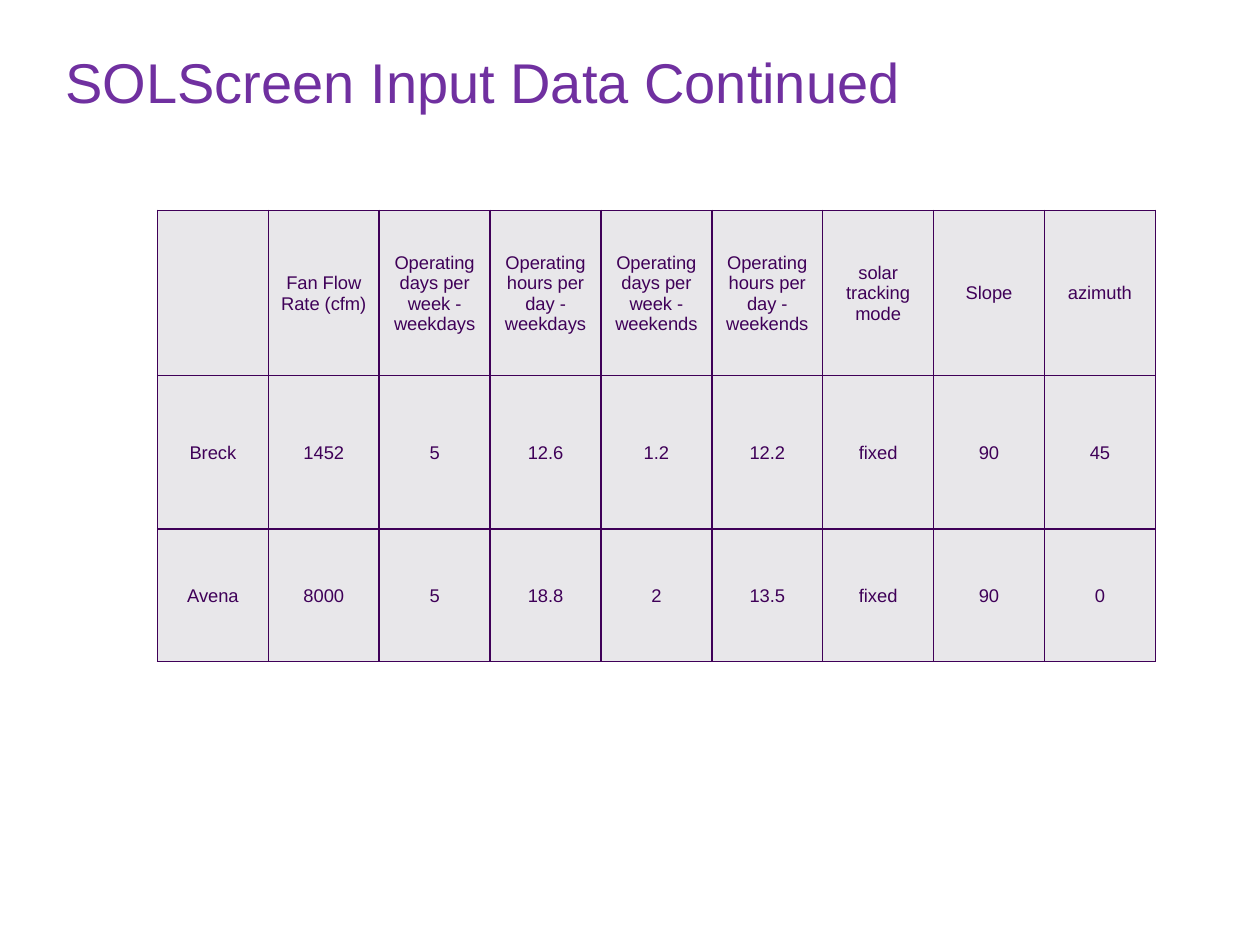
import pptx
import pptx.dml.color
import pptx.enum.text
import pptx.oxml
import pptx.oxml.ns
import pptx.util

Inches = pptx.util.Inches
Pt = pptx.util.Pt
RGBColor = pptx.dml.color.RGBColor
Align = pptx.enum.text.PP_ALIGN
Anchor = pptx.enum.text.MSO_ANCHOR

PURPLE = RGBColor(0x70, 0x30, 0xA0)
PLUM = RGBColor(0x3F, 0x00, 0x58)
PALE_GREY = RGBColor(0xE8, 0xE7, 0xEA)
WHITE = RGBColor(0xFF, 0xFF, 0xFF)

INPUT_DATA = [
    ["", "Fan Flow Rate (cfm)", "Operating days per week - weekdays",
     "Operating hours per day - weekdays", "Operating days per week - weekends",
     "Operating hours per day - weekends", "solar tracking mode", "Slope", "azimuth"],
    ["Breck", "1452", "5", "12.6", "1.2", "12.2", "fixed", "90", "45"],
    ["Avena", "8000", "5", "18.8", "2", "13.5", "fixed", "90", "0"],
]
ROW_HEIGHTS = [1.31, 1.22, 1.05]


def apply_format(target, values):
    for attribute, value in values.items():
        setattr(target, attribute, value)


class SlideBuilder:
    title_font = {"name": "Arial", "size": Pt(32), "bold": False}
    cell_font = {"name": "Arial", "size": Pt(10.5), "bold": False}
    cell_format = {
        "vertical_anchor": Anchor.MIDDLE,
        "margin_left": Inches(0.01),
        "margin_right": Inches(0.01),
        "margin_top": Inches(0.01),
        "margin_bottom": 0,
    }

    def __init__(self, deck):
        self.slide = deck.slides.add_slide(deck.slide_layouts[5])
        self.slide.background.fill.solid()
        self.slide.background.fill.fore_color.rgb = WHITE

    def add_title(self, wording, left, top, width, height):
        heading = self.slide.shapes.title
        apply_format(heading, {"left": Inches(left), "top": Inches(top),
                               "width": Inches(width), "height": Inches(height)})
        apply_format(heading.text_frame, {
            "text": wording, "word_wrap": True, "vertical_anchor": Anchor.TOP,
            "auto_size": pptx.enum.text.MSO_AUTO_SIZE.NONE})
        line = heading.text_frame.paragraphs[0]
        line.alignment = Align.LEFT
        apply_format(line.font, self.title_font)
        line.font.color.rgb = PURPLE

    def add_table(self, rows, heights, left, top, width):
        grid = self.slide.shapes.add_table(
            len(rows), len(rows[0]), Inches(left), Inches(top),
            Inches(width), Inches(sum(heights))).table
        apply_format(grid, {"first_row": False, "horz_banding": False})
        for column in grid.columns:
            column.width = Inches(width / len(rows[0]))
        for row_index, (values, height) in enumerate(zip(rows, heights)):
            grid.rows[row_index].height = Inches(height)
            for column_index, value in enumerate(values):
                self.fill_cell(grid.cell(row_index, column_index), value)

    def fill_cell(self, cell, value):
        cell.text = value
        apply_format(cell, self.cell_format)
        entry = cell.text_frame.paragraphs[0]
        entry.alignment = Align.CENTER
        apply_format(entry.font, self.cell_font)
        entry.font.color.rgb = PLUM
        self.add_borders(cell)
        cell.fill.solid()
        cell.fill.fore_color.rgb = PALE_GREY

    def add_borders(self, cell):
        properties = cell._tc.get_or_add_tcPr()
        for side in ("lnL", "lnR", "lnT", "lnB"):
            properties.append(pptx.oxml.parse_xml(
                f'<a:{side} {pptx.oxml.ns.nsdecls("a")} w="{Pt(1)}">'
                f'<a:solidFill><a:srgbClr val="{PLUM}"/></a:solidFill></a:{side}>'))


def main():
    deck = pptx.Presentation()
    apply_format(deck, {"slide_width": Inches(10), "slide_height": Inches(7.5)})
    builder = SlideBuilder(deck)
    builder.add_title("SOLScreen Input Data Continued", 0.42, 0.33, 8.58, 0.64)
    builder.add_table(INPUT_DATA, ROW_HEIGHTS, 1.25, 1.67, 7.92)
    deck.save("out.pptx")


if __name__ == "__main__":
    main()
